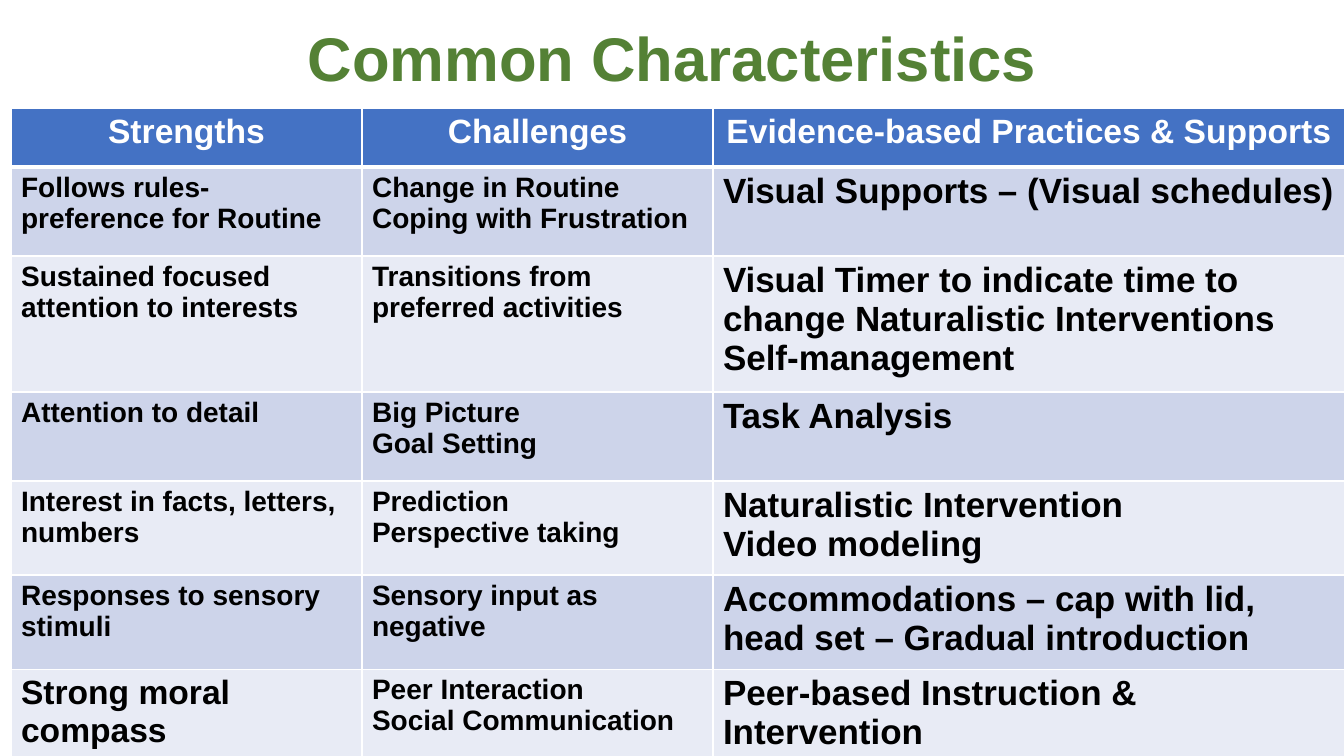
import dataclasses

import lxml.etree
import pptx
import pptx.dml.color
import pptx.enum.text
import pptx.oxml.ns
import pptx.util

EMU_PER_PX = 914400 / 100.8


@dataclasses.dataclass(frozen=True)
class Theme:
    font: str = "Arial"
    title: str = "548135"
    header_fill: str = "4472C4"
    band_fills: tuple = ("CDD4EA", "E8EBF5")
    white: str = "FFFFFF"
    black: str = "000000"
    title_size: int = 44
    header_size: int = 24
    trait_size: int = 20
    emphasis_size: int = 24
    support_size: int = 25
    rule_width: int = 1
    header_rule_width: int = 3


THEME = Theme()

HEADINGS = ["Strengths", "Challenges", "Evidence-based Practices & Supports"]
CHARACTERISTICS = [
    ["Follows rules- preference for Routine",
     "Change in Routine\nCoping with Frustration",
     "Visual Supports – (Visual schedules)"],
    ["Sustained focused attention to interests",
     "Transitions from preferred activities",
     "Visual Timer to indicate time to change Naturalistic Interventions\nSelf-management"],
    ["Attention to detail",
     "Big Picture\nGoal Setting",
     "Task Analysis"],
    ["Interest in facts, letters, numbers",
     "Prediction\nPerspective taking",
     "Naturalistic Intervention\nVideo modeling"],
    ["Responses to sensory stimuli",
     "Sensory input as negative",
     "Accommodations – cap with lid, head set – Gradual introduction"],
    ["Strong moral compass",
     "Peer Interaction\nSocial Communication",
     "Peer-based Instruction & Intervention"],
]
COLUMN_WIDTHS = [351, 351, 632]
ROW_HEIGHTS = [59, 89, 129, 89, 89, 89, 74]


def px(length):
    return pptx.util.Emu(round(length * EMU_PER_PX))


def rgb(colour):
    return pptx.dml.color.RGBColor.from_string(colour)


def style_paragraph(paragraph, size, colour, centred=False):
    if centred:
        paragraph.alignment = pptx.enum.text.PP_ALIGN.CENTER
    paragraph.font.name = THEME.font
    paragraph.font.size = pptx.util.Pt(size)
    paragraph.font.bold = True
    paragraph.font.color.rgb = rgb(colour)


def rule_cell(cell, bottom_width):
    """Draw white borders on all four sides of a cell."""
    qn = pptx.oxml.ns.qn
    properties = cell._tc.get_or_add_tcPr()
    for position, side in enumerate(("lnL", "lnR", "lnT", "lnB")):
        width = bottom_width if side == "lnB" else THEME.rule_width
        border = lxml.etree.Element(qn(f"a:{side}"), w=str(pptx.util.Pt(width)))
        fill = lxml.etree.SubElement(border, qn("a:solidFill"))
        lxml.etree.SubElement(fill, qn("a:srgbClr"), val=THEME.white)
        properties.insert(position, border)


def fill_cell(cell, text, size, colour, background, centred=False,
              bottom_width=THEME.rule_width):
    cell.text = text
    for paragraph in cell.text_frame.paragraphs:
        style_paragraph(paragraph, size, colour, centred)
    rule_cell(cell, bottom_width)
    cell.fill.solid()
    cell.fill.fore_color.rgb = rgb(background)


def add_title(slide, left, top, width, height):
    title = slide.shapes.add_textbox(px(left), px(top), px(width), px(height))
    frame = title.text_frame
    frame.word_wrap = True
    frame.vertical_anchor = pptx.enum.text.MSO_ANCHOR.MIDDLE
    frame.text = "Common Characteristics"
    frame.paragraphs[0].line_spacing = 0.9
    style_paragraph(frame.paragraphs[0], THEME.title_size, THEME.title, centred=True)


def add_characteristics(slide, left, top):
    table = slide.shapes.add_table(
        len(ROW_HEIGHTS), len(COLUMN_WIDTHS), px(left), px(top),
        px(sum(COLUMN_WIDTHS)), px(sum(ROW_HEIGHTS))).table
    for column, width in zip(table.columns, COLUMN_WIDTHS):
        column.width = px(width)
    for row, height in zip(table.rows, ROW_HEIGHTS):
        row.height = px(height)

    for column, heading in enumerate(HEADINGS):
        fill_cell(table.cell(0, column), heading, THEME.header_size, THEME.white,
                  THEME.header_fill, centred=True,
                  bottom_width=THEME.header_rule_width)

    sizes = [THEME.trait_size, THEME.trait_size, THEME.support_size]
    last_sizes = [THEME.emphasis_size, *sizes[1:]]
    for row, entries in enumerate(CHARACTERISTICS, start=1):
        band = THEME.band_fills[(row - 1) % 2]
        row_sizes = last_sizes if row == len(CHARACTERISTICS) else sizes
        for column, (entry, size) in enumerate(zip(entries, row_sizes)):
            fill_cell(table.cell(row, column), entry, size, THEME.black, band)


def main():
    presentation = pptx.Presentation()
    presentation.slide_width = px(1344)
    presentation.slide_height = px(756)
    slide = presentation.slides.add_slide(presentation.slide_layouts[6])
    add_title(slide, 93, 15, 1159, 93)
    add_characteristics(slide, 11, 108)
    presentation.save("out.pptx")


if __name__ == "__main__":
    main()
